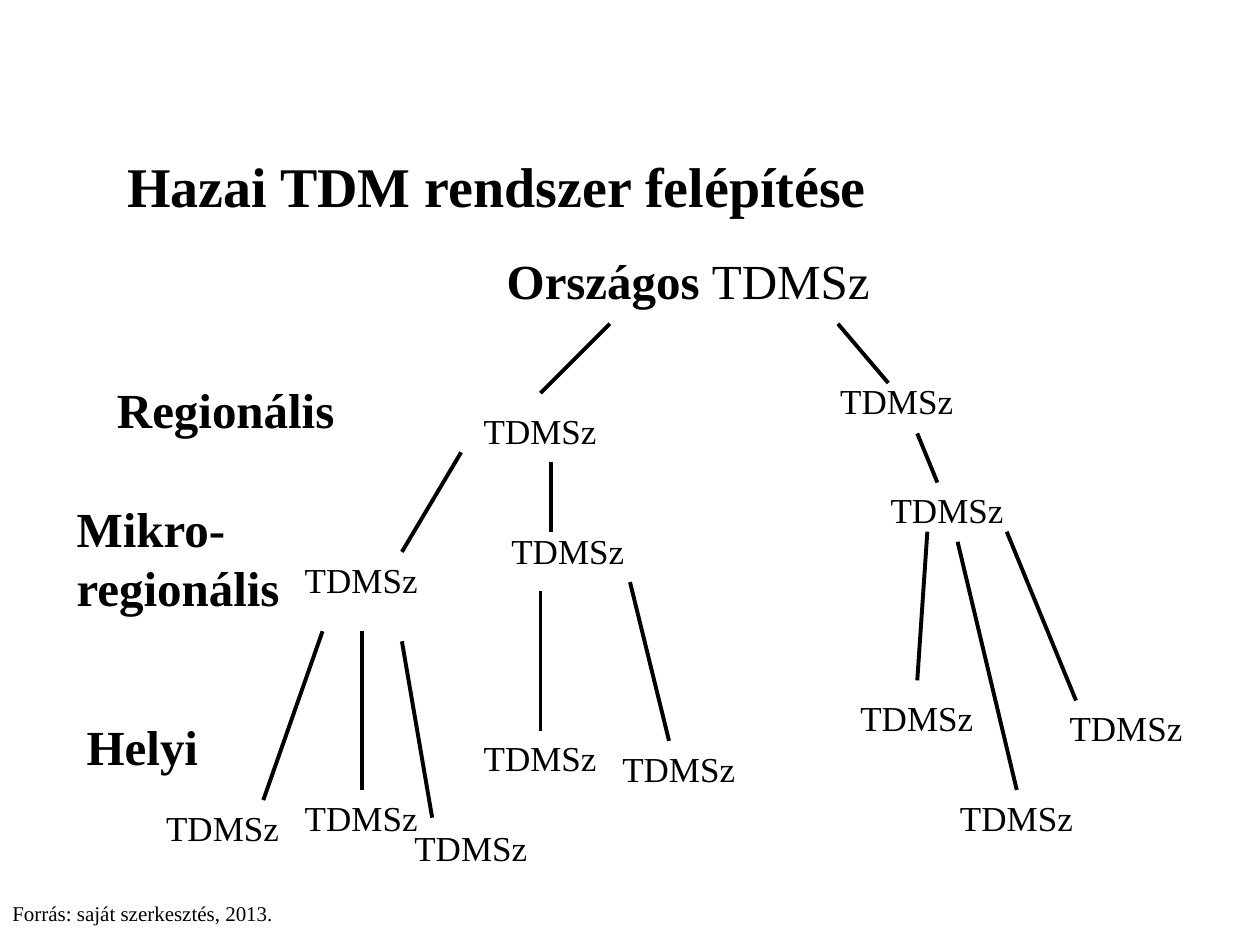
from dataclasses import dataclass

from lxml import etree
from pptx import Presentation
from pptx.dml.color import RGBColor
from pptx.enum.shapes import MSO_CONNECTOR
from pptx.enum.text import MSO_ANCHOR, MSO_AUTO_SIZE, PP_ALIGN
from pptx.oxml.ns import qn
from pptx.util import Inches, Pt

STRAIGHT = MSO_CONNECTOR.STRAIGHT
TOP = MSO_ANCHOR.TOP
NO_AUTOFIT = MSO_AUTO_SIZE.NONE
LEFT, CENTER = PP_ALIGN.LEFT, PP_ALIGN.CENTER
TITLE_ONLY = 5
WIDTH, HEIGHT = Inches(10), Inches(7.5)
COLUMNS, ROWS = 100, 75
FONT = "Times New Roman"
INK = "000000"
NODE_TEXT = "TDMSz"
NODE_SIZE = (11.8, 4.4)

LEVELS = [
    ("Regionális", 3.2, 0, 21.7, 5.7),
    ("Mikro-regionális", 0, 9.5, 18.5, 10.4),
    ("Helyi", 0.8, 26.8, 14.6, 5.7),
]
LEFT_NODES = [
    (25.4, 7), (11.2, 18.8), (27.6, 16.5), (0.2, 38.5),
    (11.2, 37.7), (19.9, 40.1), (25.4, 33), (36.4, 33.8),
]
LEFT_LINES = [
    (36.4, 0.7, 30.9, 6.2), (24.6, 10.9, 19.9, 18.8),
    (31.7, 11.7, 31.7, 17.2), (13.6, 25.1, 8.9, 38.5),
    (16.7, 25.1, 16.7, 37.7), (19.9, 25.9, 22.3, 39.9),
    (30.9, 21.9, 30.9, 33), (38, 21.2, 41.1, 33.8),
]
RIGHT_NODES = [(0.7, 4.6), (4.7, 13.3), (2.3, 29.8), (10.2, 37.7), (18.9, 30.6)]
RIGHT_LINES = [
    (1.5, 0.7, 5.5, 5.4), (7.8, 9.4, 9.4, 13.3), (8.6, 17.2, 7.8, 29),
    (11, 18, 15.7, 37.7), (14.9, 17.2, 20.4, 30.6),
]


@dataclass
class Box:
    """A region of the slide in grid columns and rows."""

    column: float
    row: float
    columns: float
    rows: float

    def inner(self, column, row, columns, rows):
        """Return a box placed relative to this one."""
        return Box(self.column + column, self.row + row, columns, rows)

    def point(self, column, row):
        """Return slide coordinates of a point relative to this box."""
        return (round((self.column + column) * WIDTH / COLUMNS),
                round((self.row + row) * HEIGHT / ROWS))

    def frame(self):
        """Return left, top, width and height on the slide."""
        return (*self.point(0, 0), round(self.columns * WIDTH / COLUMNS),
                round(self.rows * HEIGHT / ROWS))


def color(value):
    """Turn a hex string into a colour."""
    return RGBColor.from_string(value)


def format_text(shape, size, bold=False, alignment=LEFT):
    """Format every paragraph of a shape in the slide's typeface."""
    shape.text_frame.word_wrap = True
    for paragraph in shape.text_frame.paragraphs:
        paragraph.alignment = alignment
        for run in paragraph.runs:
            run.font.name = FONT
            run.font.size = Pt(size)
            run.font.bold = bold
            run.font.color.rgb = color(INK)


def add_text(slide, box, text, size, bold=False, alignment=LEFT):
    """Add a text box filling the given box."""
    shape = slide.shapes.add_textbox(*box.frame())
    shape.text_frame.text = text
    format_text(shape, size, bold, alignment)
    return shape


def add_title(slide, box):
    """Place the title placeholder in the given box."""
    title = slide.shapes.title
    title.left, title.top, title.width, title.height = box.frame()
    title.text_frame.text = "Hazai TDM rendszer felépítése"
    title.text_frame.vertical_anchor = TOP
    title.text_frame.auto_size = NO_AUTOFIT
    format_text(title, 32, bold=True)


def add_national(slide, box):
    """Add the national organisation at the root of the tree."""
    shape = add_text(slide, box, "Országos ", 28, alignment=CENTER)
    paragraph = shape.text_frame.paragraphs[0]
    paragraph.add_run().text = "TDMSz "
    format_text(shape, 28, alignment=CENTER)
    paragraph.runs[0].font.bold = True


def add_levels(slide, box):
    """Add the names of the levels down the left side."""
    for text, *area in LEVELS:
        add_text(slide, box.inner(*area), text, 28, bold=True)


def add_line(slide, box, start_column, start_row, end_column, end_row):
    """Draw a plain line between two points of the box."""
    line = slide.shapes.add_connector(
        STRAIGHT, *box.point(start_column, start_row),
        *box.point(end_column, end_row))
    line.line.color.rgb = color(INK)
    line.line.width = Pt(2.25)
    etree.SubElement(line._element.spPr, qn("a:effectLst"))


def add_branch(slide, box, nodes, lines):
    """Add one regional branch with its nodes and lines."""
    for ends in lines:
        add_line(slide, box, *ends)
    for column, row in nodes:
        add_text(slide, box.inner(column, row, *NODE_SIZE), NODE_TEXT, 20)


def main():
    """Build and save the slide."""
    presentation = Presentation()
    presentation.slide_width, presentation.slide_height = WIDTH, HEIGHT
    slide = presentation.slides.add_slide(presentation.slide_layouts[TITLE_ONLY])
    add_title(slide, Box(9.1, 11.5, 61.3, 6.4))
    add_national(slide, Box(35, 19.4, 40.2, 5.7))
    add_levels(slide, Box(5.1, 29.6, 24.9, 32.5))
    add_branch(slide, Box(12, 25, 48, 45), LEFT_NODES, LEFT_LINES)
    add_branch(slide, Box(65, 25, 31, 45), RIGHT_NODES, RIGHT_LINES)
    add_text(slide, Box(0, 71, 23, 3), "Forrás: saját szerkesztés, 2013.", 12)
    presentation.save("out.pptx")


if __name__ == "__main__":
    main()
